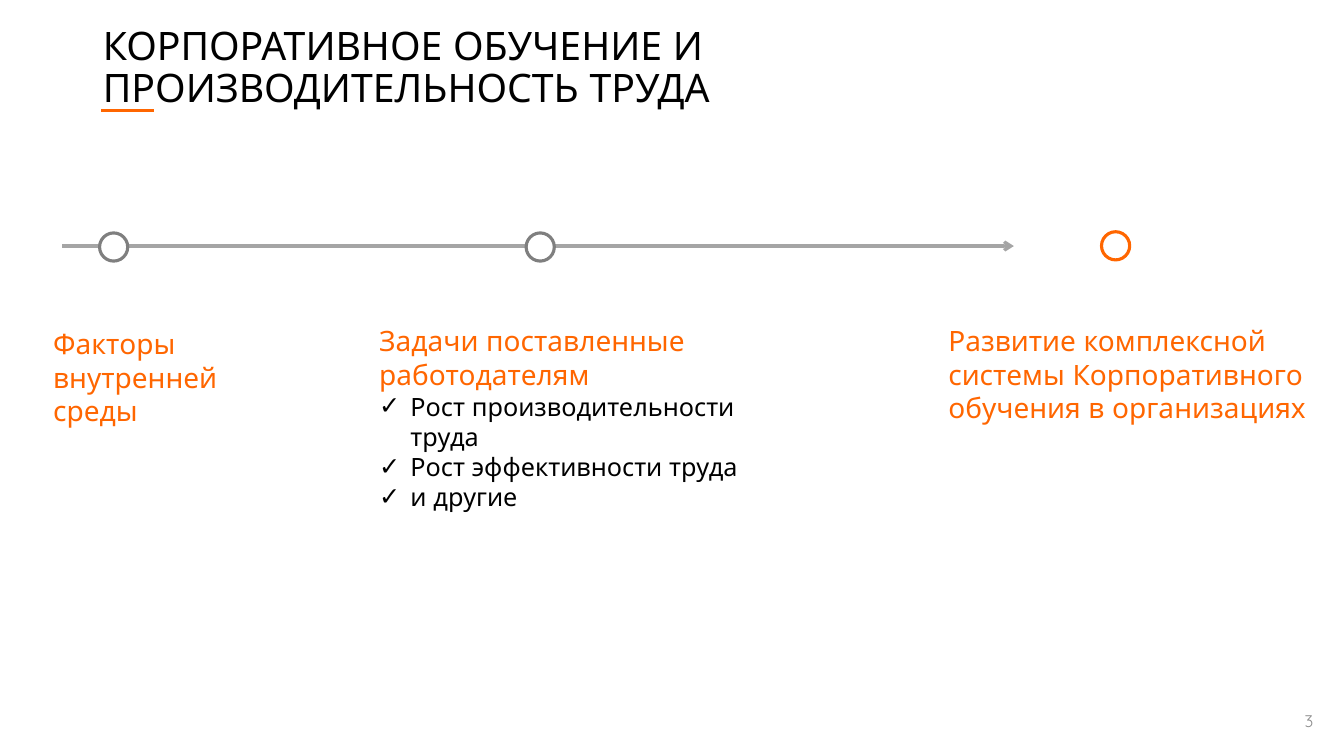
from dataclasses import dataclass

from lxml.etree import SubElement
from pptx import Presentation
from pptx.dml.color import RGBColor
from pptx.enum.shapes import MSO_CONNECTOR, MSO_SHAPE
from pptx.enum.text import MSO_ANCHOR, MSO_AUTO_SIZE, PP_ALIGN
from pptx.oxml.ns import qn
from pptx.util import Cm, Pt

FONT = "Quicksand"
COLORS = {
    "accent": "FF6600",
    "text": "000000",
    "axis": "A5A5A5",
    "marker": "7F7F7F",
    "number": "8C8C8C",
    "white": "FFFFFF",
}
MARKER_SIZE = 0.71
LINE_WIDTH = Pt(2.25)
BULLET_INDENT = Cm(0.79)


@dataclass(frozen=True)
class Area:
    left: float
    top: float
    width: float
    height: float


@dataclass(frozen=True)
class Stage:
    heading: str
    area: Area
    marker_left: float
    marker_top: float
    marker_color: str
    tasks: tuple[str, ...] = ()


@dataclass(frozen=True)
class Rule:
    left: float
    right: float
    top: float
    color: str
    arrow: bool = False


TITLE_LINES = ("КОРПОРАТИВНОЕ ОБУЧЕНИЕ И ", "ПРОИЗВОДИТЕЛЬНОСТЬ ТРУДА")
TITLE_AREA = Area(2.34, 0.25, 29.21, 2.95)
NUMBER_AREA = Area(25.73, 17.65, 7.62, 1.02)
RULES = (
    Rule(2.54, 3.89, 2.79, "accent"),
    Rule(1.57, 25.55, 6.2, "axis", arrow=True),
)
STAGES = (
    Stage("Факторы внутренней среды", Area(1.09, 8.1, 6.4, 2.82), 2.51, 5.87, "marker"),
    Stage(
        "Задачи поставленные работодателям",
        Area(9.3, 8.03, 9.63, 5.82), 13.26, 5.87, "marker",
        ("Рост производительности труда", "Рост эффективности труда", "и другие"),
    ),
    Stage(
        "Развитие комплексной системы Корпоративного обучения в организациях",
        Area(23.65, 8.03, 9.63, 3.68), 27.76, 5.84, "accent",
    ),
)


def rgb(name: str) -> RGBColor:
    return RGBColor.from_string(COLORS[name])


def place(box, area: Area) -> None:
    box.left, box.top = Cm(area.left), Cm(area.top)
    box.width, box.height = Cm(area.width), Cm(area.height)


def add_span(para, text: str, size: float, color: str) -> None:
    span = para.add_run()
    span.text = text
    span.font.name = FONT
    span.font.size = Pt(size)
    span.font.color.rgb = rgb(color)


def set_bullet(para, symbol: str = "") -> None:
    """Give the paragraph a hanging bullet, or none when symbol is empty."""
    properties = para._p.get_or_add_pPr()
    indent = BULLET_INDENT if symbol else 0
    properties.set("marL", str(indent))
    properties.set("indent", str(-indent))
    if symbol:
        SubElement(properties, qn("a:buChar")).set("char", symbol)
    else:
        SubElement(properties, qn("a:buNone"))
    para.space_before = Pt(0)


def fill_title(box) -> None:
    place(box, TITLE_AREA)
    frame = box.text_frame
    frame.auto_size = MSO_AUTO_SIZE.NONE
    frame.vertical_anchor = MSO_ANCHOR.MIDDLE
    para = frame.paragraphs[0]
    para.alignment = PP_ALIGN.LEFT
    para.line_spacing = 0.9
    for index, line in enumerate(TITLE_LINES):
        if index:
            para.add_line_break()
        add_span(para, line, 28, "text")


def add_rule(page, rule: Rule) -> None:
    line = page.shapes.add_connector(
        MSO_CONNECTOR.STRAIGHT, Cm(rule.left), Cm(rule.top), Cm(rule.right), Cm(rule.top)
    )
    line.line.color.rgb = rgb(rule.color)
    line.line.width = LINE_WIDTH
    if rule.arrow:
        SubElement(line.line._get_or_add_ln(), qn("a:tailEnd")).set("type", "arrow")
    SubElement(line._element.spPr, qn("a:effectLst"))


def add_marker(page, stage: Stage) -> None:
    marker = page.shapes.add_shape(
        MSO_SHAPE.OVAL, Cm(stage.marker_left), Cm(stage.marker_top),
        Cm(MARKER_SIZE), Cm(MARKER_SIZE),
    )
    marker.shadow.inherit = False
    marker.fill.solid()
    marker.fill.fore_color.rgb = rgb("white")
    marker.line.color.rgb = rgb(stage.marker_color)
    marker.line.width = LINE_WIDTH


def fill_stage(box, stage: Stage) -> None:
    place(box, stage.area)
    frame = box.text_frame
    frame.word_wrap = True
    frame.auto_size = MSO_AUTO_SIZE.SHAPE_TO_FIT_TEXT
    heading = frame.paragraphs[0]
    set_bullet(heading)
    add_span(heading, stage.heading, 20, "accent")
    for task in stage.tasks:
        para = frame.add_paragraph()
        set_bullet(para, "✓")
        add_span(para, task, 18, "text")


def add_number(page, number: int) -> None:
    box = page.shapes.add_textbox(0, 0, 0, 0)
    place(box, NUMBER_AREA)
    box.text_frame.word_wrap = True
    box.text_frame.vertical_anchor = MSO_ANCHOR.MIDDLE
    para = box.text_frame.paragraphs[0]
    para.alignment = PP_ALIGN.RIGHT
    add_span(para, str(number), 12, "number")


def main() -> None:
    deck = Presentation()
    deck.slide_width, deck.slide_height = Cm(33.87), Cm(19.05)
    page = deck.slides.add_slide(deck.slide_layouts.get_by_name("Title and Content"))
    fill_title(page.shapes.title)
    for rule in RULES:
        add_rule(page, rule)
    for stage in STAGES:
        add_marker(page, stage)
        if stage.tasks:
            box = page.placeholders[1]
        else:
            box = page.shapes.add_textbox(0, 0, 0, 0)
        fill_stage(box, stage)
    add_number(page, 3)
    deck.save("out.pptx")


if __name__ == "__main__":
    main()
